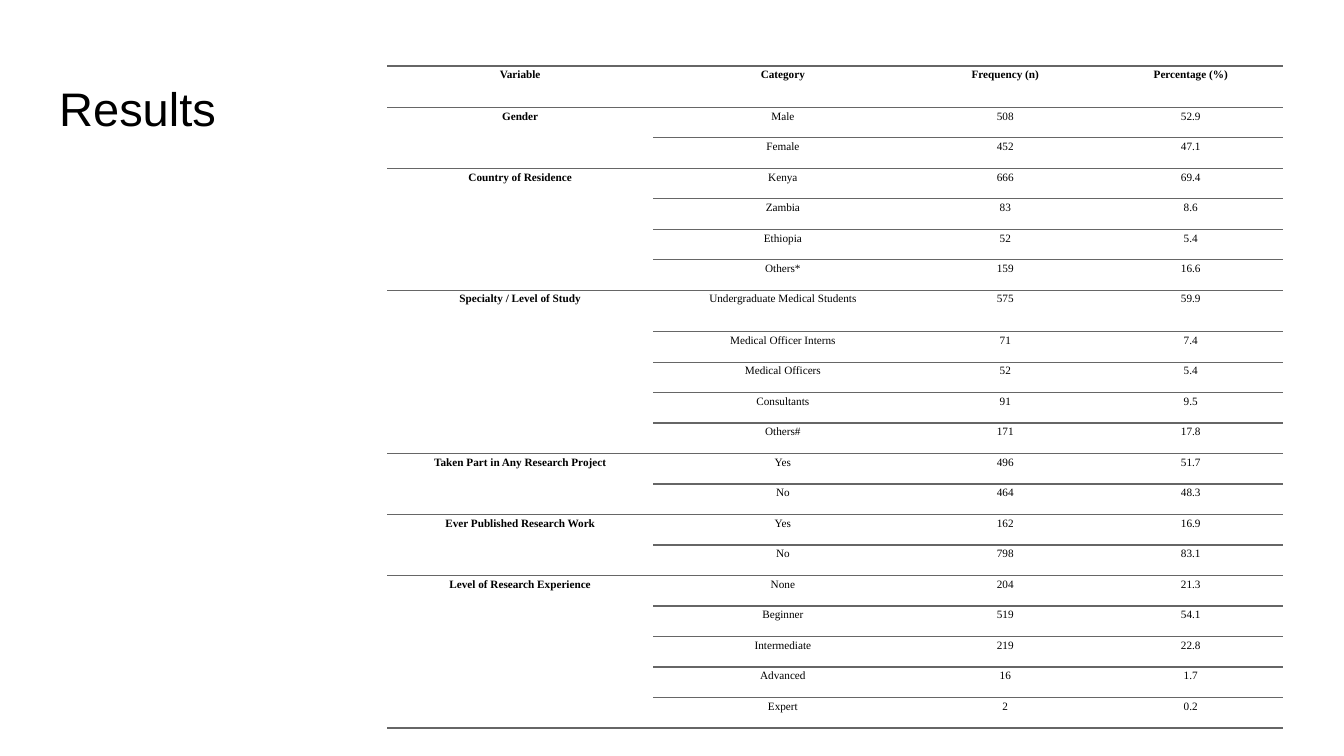
from lxml.etree import SubElement
from pptx import Presentation
from pptx.dml.color import RGBColor
from pptx.enum.text import MSO_ANCHOR, MSO_AUTO_SIZE, PP_ALIGN
from pptx.oxml.ns import qn
from pptx.util import Inches, Pt

THEME = {
    "title": {"name": "Arial", "size": Pt(25.2), "bold": False, "color": "000000"},
    "label": {"name": "Times New Roman", "size": Pt(6), "bold": True, "color": "000000"},
    "value": {"name": "Times New Roman", "size": Pt(6), "bold": False, "color": "000000"},
    "rule": {"color": "666666", "width": Pt(0.83)},
}
PLAIN = "{2D5ABB26-0587-4C30-8999-92F81FD0307C}"
HEADS = ["Variable", "Category", "Frequency (n)", "Percentage (%)"]
GROUPS = {
    "Gender": [("Male", "508", "52.9"), ("Female", "452", "47.1")],
    "Country of Residence": [
        ("Kenya", "666", "69.4"),
        ("Zambia", "83", "8.6"),
        ("Ethiopia", "52", "5.4"),
        ("Others*", "159", "16.6"),
    ],
    "Specialty / Level of Study": [
        ("Undergraduate Medical Students", "575", "59.9"),
        ("Medical Officer Interns", "71", "7.4"),
        ("Medical Officers", "52", "5.4"),
        ("Consultants", "91", "9.5"),
        ("Others#", "171", "17.8"),
    ],
    "Taken Part in Any Research Project": [("Yes", "496", "51.7"), ("No", "464", "48.3")],
    "Ever Published Research Work": [("Yes", "162", "16.9"), ("No", "798", "83.1")],
    "Level of Research Experience": [
        ("None", "204", "21.3"),
        ("Beginner", "519", "54.1"),
        ("Intermediate", "219", "22.8"),
        ("Advanced", "16", "1.7"),
        ("Expert", "2", "0.2"),
    ],
}


def style(run, look):
    for key in ("name", "size", "bold"):
        setattr(run.font, key, look[key])
    run.font.color.rgb = RGBColor.from_string(look["color"])


def border(cell, sides):
    props = cell._tc.get_or_add_tcPr()
    for side in "LRTB":
        line = SubElement(props, qn(f"a:ln{side}"))
        if side in sides:
            line.set("w", str(THEME["rule"]["width"]))
            fill = SubElement(line, qn("a:solidFill"))
            SubElement(fill, qn("a:srgbClr")).set("val", THEME["rule"]["color"])
        else:
            SubElement(line, qn("a:noFill"))


deck = Presentation()
deck.slide_width = Inches(10)
deck.slide_height = deck.slide_width * 9 // 16
unit = deck.slide_width / 10
slide = deck.slides.add_slide(deck.slide_layouts[5])

title = slide.shapes.title
place = {"left": 0.34, "top": 0.49, "width": 9.32, "height": 0.63}
for key, size in place.items():
    setattr(title, key, int(size * unit))
frame = title.text_frame
inset = {f"margin_{side}": Inches(0.1) for side in ("left", "top", "right", "bottom")}
inset |= {"vertical_anchor": MSO_ANCHOR.TOP, "auto_size": MSO_AUTO_SIZE.NONE}
for key, item in inset.items():
    setattr(frame, key, item)
frame.text = "Results"
frame.paragraphs[0].alignment = PP_ALIGN.LEFT
style(frame.paragraphs[0].runs[0], THEME["title"])

rows, starts, tall = [HEADS], [], [0]
for name, items in GROUPS.items():
    starts.append(len(rows))
    for spot, item in enumerate(items):
        if item[0] == "Undergraduate Medical Students":
            tall.append(len(rows))
        rows.append([name if spot == 0 else "", *item])
ends = [start - 1 for start in starts[1:]] + [len(rows) - 1]

spans = [1.98, 1.93, 1.38, 1.38]
parts = [1.36 if row in tall else 1 for row in range(len(rows))]
full = 4.93 * unit
holder = slide.shapes.add_table(
    len(rows), len(spans), int(2.88 * unit), int(0.49 * unit), int(sum(spans) * unit), int(full)
)
table = holder.table
table._tbl.tblPr.find(qn("a:tableStyleId")).text = PLAIN
table.first_row = table.horz_banding = False
for column, span in zip(table.columns, spans):
    column.width = int(span * unit)
for row, part in zip(table.rows, parts):
    row.height = int(full * part / sum(parts))

pad = {f"margin_{side}": Inches(0.02) for side in ("left", "top", "right", "bottom")}
pad["vertical_anchor"] = MSO_ANCHOR.TOP
for r, texts in enumerate(rows):
    for c, text in enumerate(texts):
        cell = table.cell(r, c)
        for key, item in pad.items():
            setattr(cell, key, item)
        border(cell, "TB" if text else "B" if r in ends else "")
        cell.fill.background()
        para = cell.text_frame.paragraphs[0]
        para.alignment = PP_ALIGN.CENTER
        if text:
            para.space_after = Pt(12)
            run = para.add_run()
            run.text = text
            style(run, THEME["label" if r == 0 or c == 0 else "value"])
        else:
            SubElement(para._p, qn("a:endParaRPr")).set("sz", "600")
for start, end in zip(starts, ends):
    table.cell(start, 0).merge(table.cell(end, 0))

deck.save("out.pptx")
